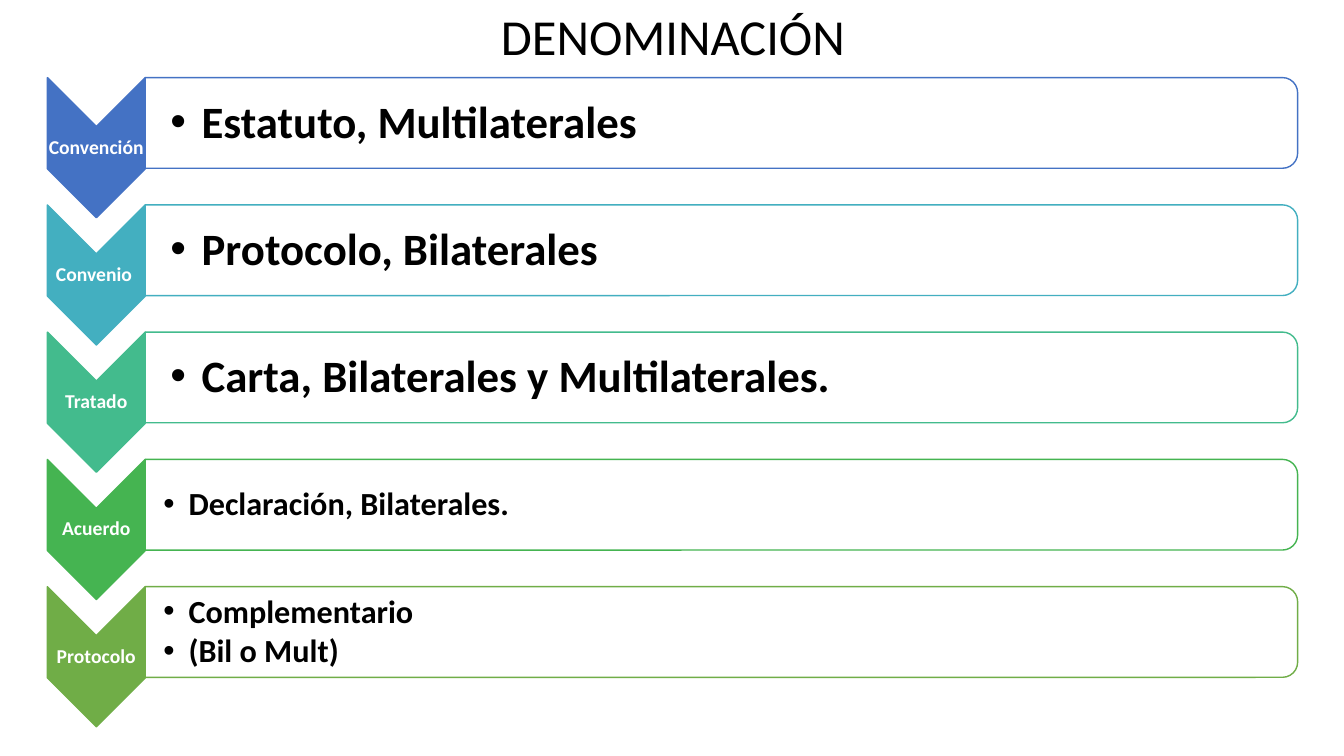
from dataclasses import dataclass

from lxml.etree import SubElement
from pptx import Presentation
from pptx.dml.color import RGBColor
from pptx.enum.shapes import MSO_SHAPE
from pptx.enum.text import MSO_ANCHOR, PP_ALIGN
from pptx.oxml.ns import qn
from pptx.util import Inches, Pt


@dataclass(frozen=True)
class Theme:
    font: str = "Calibri"
    ink: str = "000000"
    paper: str = "FFFFFF"
    title_size: int = 36
    label_size: int = 14
    large_size: int = 32
    small_size: int = 23
    accents: tuple = ("4472C4", "43AFC0", "43BB8D", "45B451", "70AD47")


THEME = Theme()
WIDTH, HEIGHT = 13.33, 7.5

# Row grid, in inches
FIRST_ROW, LAST_ROW = 0.77, 5.82
ARROW_LEFT, ARROW_WIDTH, ARROW_HEIGHT = 0.47, 0.97, 1.39
PANEL_LEFT, PANEL_WIDTH, PANEL_HEIGHT = 1.44, 11.43, 0.9

# Bullet geometry per type size: (left inset, hanging indent)
BULLETS = {THEME.large_size: (0.25, 0.31), THEME.small_size: (0.18, 0.25)}

ROWS = (
    ("Convención ", THEME.large_size, ["Estatuto, Multilaterales"]),
    ("Convenio ", THEME.large_size, ["Protocolo, Bilaterales"]),
    ("Tratado", THEME.large_size, ["Carta, Bilaterales y Multilaterales."]),
    ("Acuerdo", THEME.small_size, ["Declaración, Bilaterales."]),
    ("Protocolo", THEME.small_size, ["Complementario", "(Bil o Mult)"]),
)


def set_bullet(para, indent):
    properties = para._p.get_or_add_pPr()
    properties.set("marL", str(Inches(indent)))
    properties.set("indent", str(-Inches(indent)))
    SubElement(properties, qn("a:buFont")).set("typeface", "Arial")
    SubElement(properties, qn("a:buChar")).set("char", "•")


def add_text(page, area, lines, size, color, bold=True, align=PP_ALIGN.LEFT,
             insets=(0.1, 0.05, 0.1, 0.05), after=0, indent=0):
    """Add a text box; after is the paragraph gap as a share of the type size."""
    box = page.shapes.add_textbox(*map(Inches, area))
    frame = box.text_frame
    left, top, right, bottom = map(Inches, insets)
    frame_format = {
        "word_wrap": True, "vertical_anchor": MSO_ANCHOR.MIDDLE,
        "margin_left": left, "margin_top": top,
        "margin_right": right, "margin_bottom": bottom,
    }
    for name, value in frame_format.items():
        setattr(frame, name, value)
    for index, line in enumerate(lines):
        para = frame.add_paragraph() if index else frame.paragraphs[0]
        para_format = {"alignment": align, "line_spacing": 0.9,
                       "space_before": Pt(0), "space_after": Pt(size * after)}
        for name, value in para_format.items():
            setattr(para, name, value)
        if indent:
            para.level = 1
            set_bullet(para, indent)
        span = para.add_run()
        span.text = line
        span_format = {"name": THEME.font, "size": Pt(size), "bold": bold}
        for name, value in span_format.items():
            setattr(span.font, name, value)
        span.font.color.rgb = RGBColor.from_string(color)


def add_turned_shape(page, kind, area, fill, line):
    """Add a shape turned by 90 degrees that covers the area as seen."""
    left, top, width, height = area
    shift = (width - height) / 2
    shape = page.shapes.add_shape(
        kind, *map(Inches, (left + shift, top - shift, height, width)))
    shape.rotation = 90
    shape.shadow.inherit = False
    shape.fill.solid()
    shape.fill.fore_color.rgb = RGBColor.from_string(fill)
    shape.line.color.rgb = RGBColor.from_string(line)
    shape.line.width = Pt(1)


def add_row(page, top, accent, label, size, lines):
    add_turned_shape(page, MSO_SHAPE.CHEVRON,
                     (ARROW_LEFT, top, ARROW_WIDTH, ARROW_HEIGHT), accent, accent)
    add_text(page,
             (ARROW_LEFT, top + ARROW_WIDTH / 2, ARROW_WIDTH, ARROW_HEIGHT - ARROW_WIDTH),
             [label], THEME.label_size, THEME.paper, align=PP_ALIGN.CENTER,
             insets=(0.01,) * 4, after=0.35)
    add_turned_shape(page, MSO_SHAPE.ROUND_2_SAME_RECTANGLE,
                     (PANEL_LEFT, top, PANEL_WIDTH, PANEL_HEIGHT), THEME.paper, accent)
    inset, indent = BULLETS[size]
    add_text(page,
             (PANEL_LEFT, top + 0.05, PANEL_WIDTH - 0.05, PANEL_HEIGHT - 0.09),
             lines, size, THEME.ink, insets=(inset, 0.02, 0.02, 0.02),
             after=0.15, indent=indent)


def main():
    deck = Presentation()
    deck.slide_width, deck.slide_height = Inches(WIDTH), Inches(HEIGHT)
    page = deck.slides.add_slide(deck.slide_layouts[6])
    add_text(page, (2.34, 0, 8.67, 0.77), ["DENOMINACIÓN"], THEME.title_size,
             THEME.ink, bold=False, align=PP_ALIGN.CENTER)
    pitch = (LAST_ROW - FIRST_ROW) / (len(ROWS) - 1)
    for index, (row, accent) in enumerate(zip(ROWS, THEME.accents)):
        add_row(page, FIRST_ROW + index * pitch, accent, *row)
    deck.save("out.pptx")


if __name__ == "__main__":
    main()
